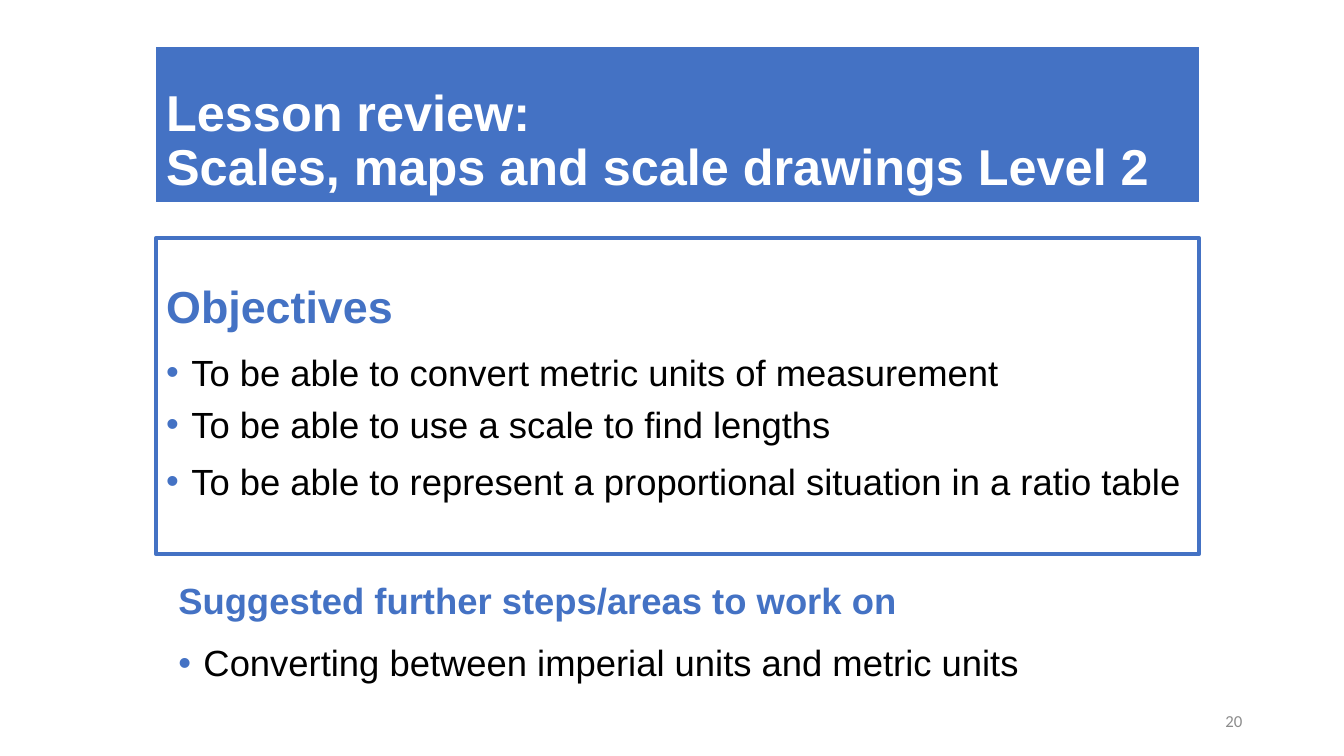
from lxml import etree
from pptx import Presentation
from pptx.dml.color import RGBColor
from pptx.enum.shapes import MSO_SHAPE
from pptx.enum.text import MSO_ANCHOR, PP_ALIGN
from pptx.oxml.ns import qn
from pptx.util import Inches, Pt

RECT = MSO_SHAPE.RECTANGLE
TOP, MIDDLE, BOTTOM = MSO_ANCHOR.TOP, MSO_ANCHOR.MIDDLE, MSO_ANCHOR.BOTTOM
LEFT, RIGHT = PP_ALIGN.LEFT, PP_ALIGN.RIGHT
BLUE, WHITE, BLACK, GREY = "4472C4", "FFFFFF", "000000", "8C8C8C"
COL, WIDTH = 1.55, 10.34


def color(value):
    return RGBColor.from_string(value)


def add_bullet(p):
    """Give the paragraph a blue round bullet with a hanging indent."""
    pPr = p._p.get_or_add_pPr()
    pPr.set("marL", str(Inches(0.25)))
    pPr.set("indent", str(-Inches(0.25)))
    clr = etree.SubElement(pPr, qn("a:buClr"))
    etree.SubElement(clr, qn("a:srgbClr"), val=BLUE)
    etree.SubElement(pPr, qn("a:buFont"), typeface="Arial")
    etree.SubElement(pPr, qn("a:buChar"), char="•")


prs = Presentation()
prs.slide_width, prs.slide_height = Inches(13.33), Inches(7.5)
s = prs.slides.add_slide(prs.slide_layouts[6])

heading = {"size": Pt(32), "name": "Arial", "bold": True}
further = {**heading, "size": Pt(26)}
title = {**heading, "size": Pt(36)}
body = {**further, "bold": False}
number = {"size": Pt(12), "name": "Calibri", "bold": False}

tight = {"line_spacing": 0.9}
loose = {"line_spacing": 1.2}
fixed = {"line_spacing": Pt(31), "space_after": Pt(6)}

# Box: position, fill, line width, anchor, paragraphs
# Paragraph: text, font, colour, bulleted, paragraph format
boxes = [
    ((COL, 0.47, WIDTH, 1.53), BLUE, 0.75, BOTTOM, [
        ("Lesson review:\vScales, maps and scale drawings Level 2",
         title, WHITE, False, tight),
    ]),
    ((COL, 2.36, WIDTH, 3.14), None, 3, MIDDLE, [
        ("Objectives", heading, BLUE, False, fixed),
        ("To be able to convert metric units of measurement",
         body, BLACK, True, loose),
        ("To be able to use a scale to find lengths",
         body, BLACK, True, loose),
        ("To be able to represent a proportional situation in a ratio table",
         body, BLACK, True, {**fixed, "space_before": Pt(10)}),
    ]),
    ((1.67, 5.74, WIDTH, 1.18), None, None, TOP, [
        ("Suggested further steps/areas to work on",
         further, BLUE, False, tight),
        ("Converting between imperial units and metric units",
         body, BLACK, True, {**tight, "space_before": Pt(16)}),
    ]),
    ((9.42, 6.95, 3, 0.4), None, None, MIDDLE, [
        ("20", number, GREY, False, {"alignment": RIGHT}),
    ]),
]

for place, fill, line, anchor, paragraphs in boxes:
    at = [Inches(v) for v in place]
    if line:
        sp = s.shapes.add_shape(RECT, *at)
        sp.shadow.inherit = False
        sp.line.color.rgb = color(BLUE)
        sp.line.width = Pt(line)
        if fill:
            sp.fill.solid()
            sp.fill.fore_color.rgb = color(fill)
        else:
            sp.fill.background()
    else:
        sp = s.shapes.add_textbox(*at)
    tf = sp.text_frame
    tf.word_wrap = True
    tf.vertical_anchor = anchor
    for i, (text, font, ink, bulleted, layout) in enumerate(paragraphs):
        p = tf.add_paragraph() if i else tf.paragraphs[0]
        p.text = text
        for key, value in {"alignment": LEFT, **layout}.items():
            setattr(p, key, value)
        if bulleted:
            add_bullet(p)
        for r in p.runs:
            for key, value in font.items():
                setattr(r.font, key, value)
            r.font.color.rgb = color(ink)

prs.save("out.pptx")
